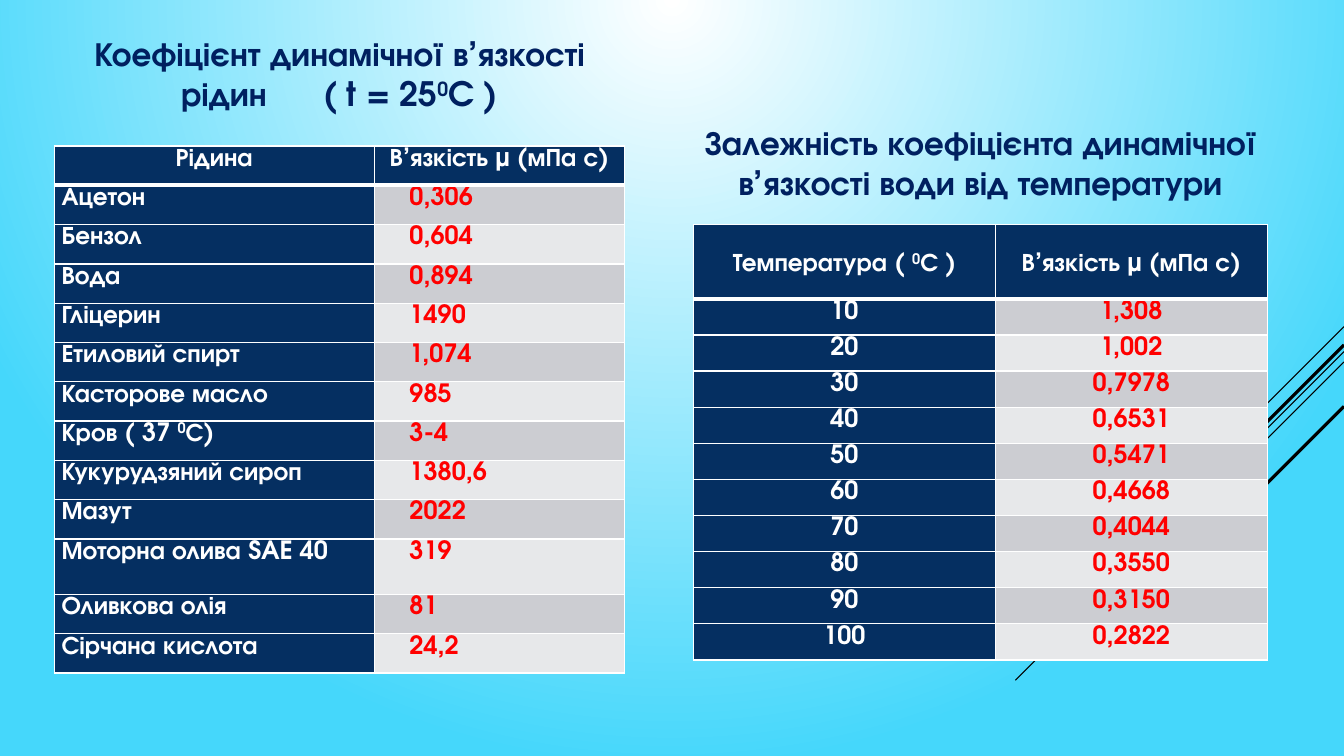
import lxml.etree
import pptx
import pptx.dml.color
import pptx.enum.shapes
import pptx.enum.text
import pptx.oxml.ns
import pptx.util

Cm = pptx.util.Cm
Pt = pptx.util.Pt
qn = pptx.oxml.ns.qn
CENTER = pptx.enum.text.PP_ALIGN.CENTER
LEFT = pptx.enum.text.PP_ALIGN.LEFT
MIDDLE = pptx.enum.text.MSO_ANCHOR.MIDDLE
TOP = pptx.enum.text.MSO_ANCHOR.TOP

FONT = "TeX Gyre Adventor"
NAVY, HEADING, RED, WHITE = "052F61", "002060", "FF0000", "FFFFFF"
BANDS = ("CCCDD2", "E7E8EA")
SLIDE_WIDTH, SLIDE_HEIGHT = 33.87, 19.05

SUPERSCRIPT_ZERO = ("0", {"baseline": "30000"})
WIDE_SPACE = (" ", {"spc": "3350"})
VISCOSITY = "В’язкість μ (мПа с)"

LIQUIDS = [
    ("Рідина", VISCOSITY),
    ("Ацетон", "0,306"),
    ("Бензол", "0,604"),
    ("Вода", "0,894"),
    ("Гліцерин", "1490"),
    ("Етиловий спирт", "1,074"),
    ("Касторове масло", "985"),
    (["Кров ( 37 ", SUPERSCRIPT_ZERO, "С)"], "3-4"),
    ("Кукурудзяний сироп", "1380,6"),
    ("Мазут", "2022"),
    ("Моторна олива SAE 40", "319"),
    ("Оливкова олія", "81"),
    ("Сірчана кислота", "24,2"),
]
WATER = [
    (["Температура ( ", SUPERSCRIPT_ZERO, "С )"], VISCOSITY),
    ("10", "1,308"),
    ("20", "1,002"),
    ("30", "0,7978"),
    ("40", "0,6531"),
    ("50", "0,5471"),
    ("60", "0,4668"),
    ("70", "0,4044"),
    ("80", "0,3550"),
    ("90", "0,3150"),
    ("100", "0,2822"),
]
# Diagonals at 45 degrees: height at the right edge, horizontal run, width in points
DIAGONALS = [(8.23, 2.54, 0.75), (8.86, 8.28, 0.75), (9.12, 5.27, 0.75),
             (8.69, 4.85, 2.25), (10.24, 3.53, 2.25)]


def color(value):
    return pptx.dml.color.RGBColor.from_string(value)


def write_text(text_frame, text, size=18, fill=WHITE, align=CENTER, spacing=1.0):
    """Text is a string or a list of strings and (string, run attributes) pairs."""
    paragraph = text_frame.paragraphs[0]
    paragraph.alignment = align
    paragraph.line_spacing = spacing
    for part in [text] if isinstance(text, str) else text:
        content, attributes = (part, {}) if isinstance(part, str) else part
        run = paragraph.add_run()
        run.text = content
        run.font.name = FONT
        run.font.size = Pt(size)
        run.font.bold = True
        run.font.color.rgb = color(fill)
        for name, value in attributes.items():
            run._r.get_or_add_rPr().set(name, value)


def set_background(slide):
    fill = slide.background.fill
    fill.gradient()
    for stop, value in zip(fill.gradient_stops, (WHITE, "45D7FB")):
        stop.color.rgb = color(value)
    # Radial gradient centred on the top edge
    linear = slide.element.find(".//" + qn("a:lin"))
    radial = lxml.etree.Element(qn("a:path"), path="circle")
    lxml.etree.SubElement(radial, qn("a:fillToRect"), b="100000")
    linear.getparent().replace(linear, radial)


def add_diagonal(slide, right_y, run, width):
    line = slide.shapes.add_connector(
        pptx.enum.shapes.MSO_CONNECTOR.STRAIGHT,
        Cm(SLIDE_WIDTH), Cm(right_y), Cm(SLIDE_WIDTH - run), Cm(right_y + run))
    line.line.color.rgb = color("000000")
    line.line.width = Pt(width)
    lxml.etree.SubElement(line._element.spPr, qn("a:effectLst"))


def format_heading(shape, text, left, top, width, height, anchor):
    shape.left, shape.top = Cm(left), Cm(top)
    shape.width, shape.height = Cm(width), Cm(height)
    text_frame = shape.text_frame
    text_frame.word_wrap = True
    text_frame.auto_size = pptx.enum.text.MSO_AUTO_SIZE.NONE
    text_frame.vertical_anchor = anchor
    write_text(text_frame, text, size=24, fill=HEADING)


def set_borders(cell, top, bottom):
    properties = cell._tc.get_or_add_tcPr()
    for side, width in (("L", 1), ("R", 1), ("T", top), ("B", bottom)):
        line = lxml.etree.SubElement(properties, qn("a:ln" + side), w=str(Pt(width)))
        solid = lxml.etree.SubElement(line, qn("a:solidFill"))
        lxml.etree.SubElement(solid, qn("a:srgbClr"), val=WHITE)


def add_viscosity_table(slide, rows, left, top, widths, heights, align,
                        value_indent=0, header_anchor=TOP, header_top=0):
    frame = slide.shapes.add_table(len(rows), len(widths), Cm(left), Cm(top),
                                   Cm(sum(widths)), Cm(sum(heights)))
    table = frame.table
    for column, width in zip(table.columns, widths):
        column.width = Cm(width)
    for row_index, (row, height) in enumerate(zip(rows, heights)):
        table.rows[row_index].height = Cm(height)
        is_header = row_index == 0
        for column_index, text in enumerate(row):
            is_value = column_index == 1 and not is_header
            cell = table.cell(row_index, column_index)
            cell.margin_left = Cm(0.18 + (value_indent if is_value else 0))
            cell.margin_right = Cm(0.18)
            cell.margin_top = Cm(header_top if is_header else 0)
            cell.margin_bottom = Cm(0)
            cell.vertical_anchor = header_anchor if is_header else TOP
            set_borders(cell, 3 if row_index == 1 else 1, 3 if is_header else 1)
            cell.fill.solid()
            cell.fill.fore_color.rgb = color(
                BANDS[(row_index - 1) % 2] if is_value else NAVY)
            write_text(cell.text_frame, text, fill=RED if is_value else WHITE,
                       align=CENTER if is_header else align, spacing=1.07)


def main():
    presentation = pptx.Presentation()
    presentation.slide_width = Cm(SLIDE_WIDTH)
    presentation.slide_height = Cm(SLIDE_HEIGHT)
    slide = presentation.slides.add_slide(presentation.slide_layouts[5])

    # Backdrop
    set_background(slide)
    for diagonal in DIAGONALS:
        add_diagonal(slide, *diagonal)

    # Liquids at 25 degrees
    format_heading(
        slide.shapes.title,
        ["Коефіцієнт динамічної в’язкості рідин", WIDE_SPACE, "( t = 25",
         SUPERSCRIPT_ZERO, "C )"],
        1.37, 0.69, 14.38, 2.31, MIDDLE)
    add_viscosity_table(slide, LIQUIDS, 1.37, 3.68, (8.06, 6.31),
                        [0.99] * 10 + [1.4] + [0.99] * 2, LEFT, value_indent=0.71)

    # Water at different temperatures
    format_heading(
        slide.shapes.add_textbox(0, 0, 0, 0),
        "Залежність коефіцієнта динамічної в’язкості води від температури",
        16.43, 2.95, 16.56, 2.31, TOP)
    add_viscosity_table(slide, WATER, 17.48, 5.65, (7.6, 6.86),
                        [1.88] + [0.91] * 10, CENTER,
                        header_anchor=MIDDLE, header_top=0.13)

    presentation.save("out.pptx")


if __name__ == "__main__":
    main()
